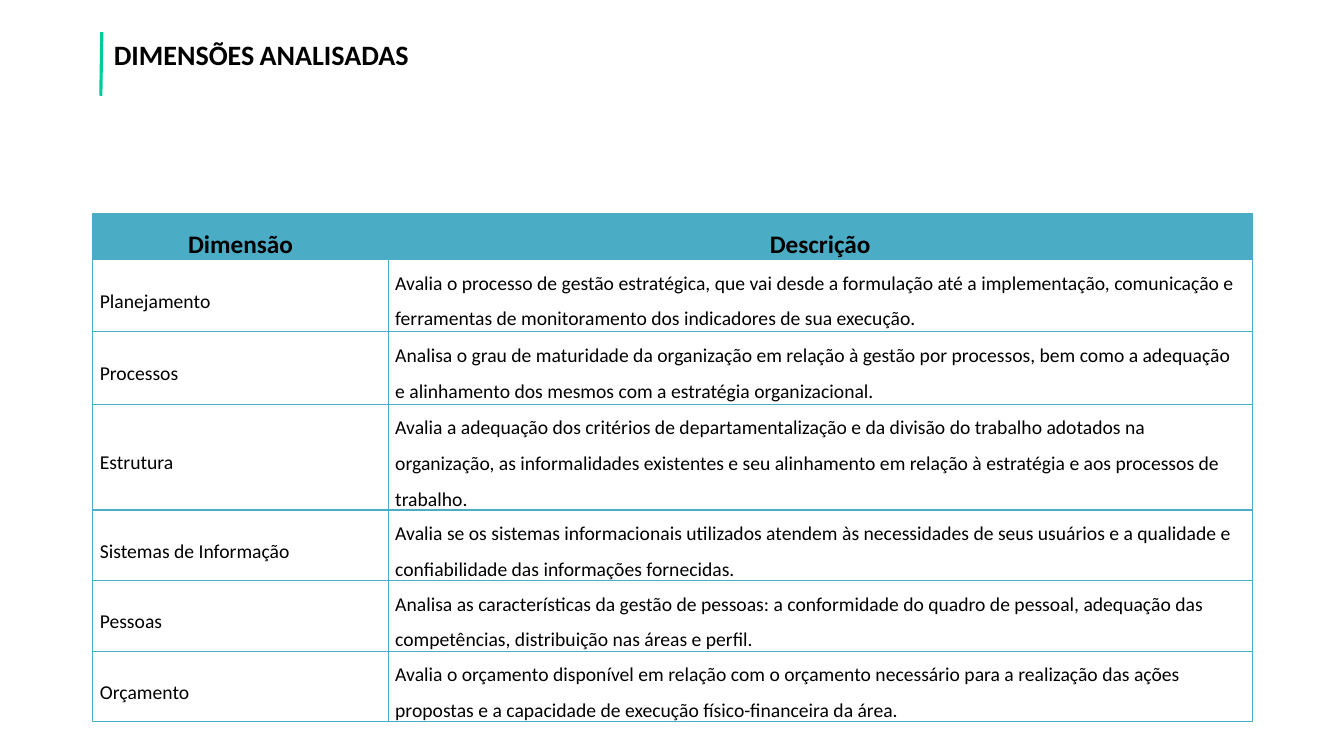
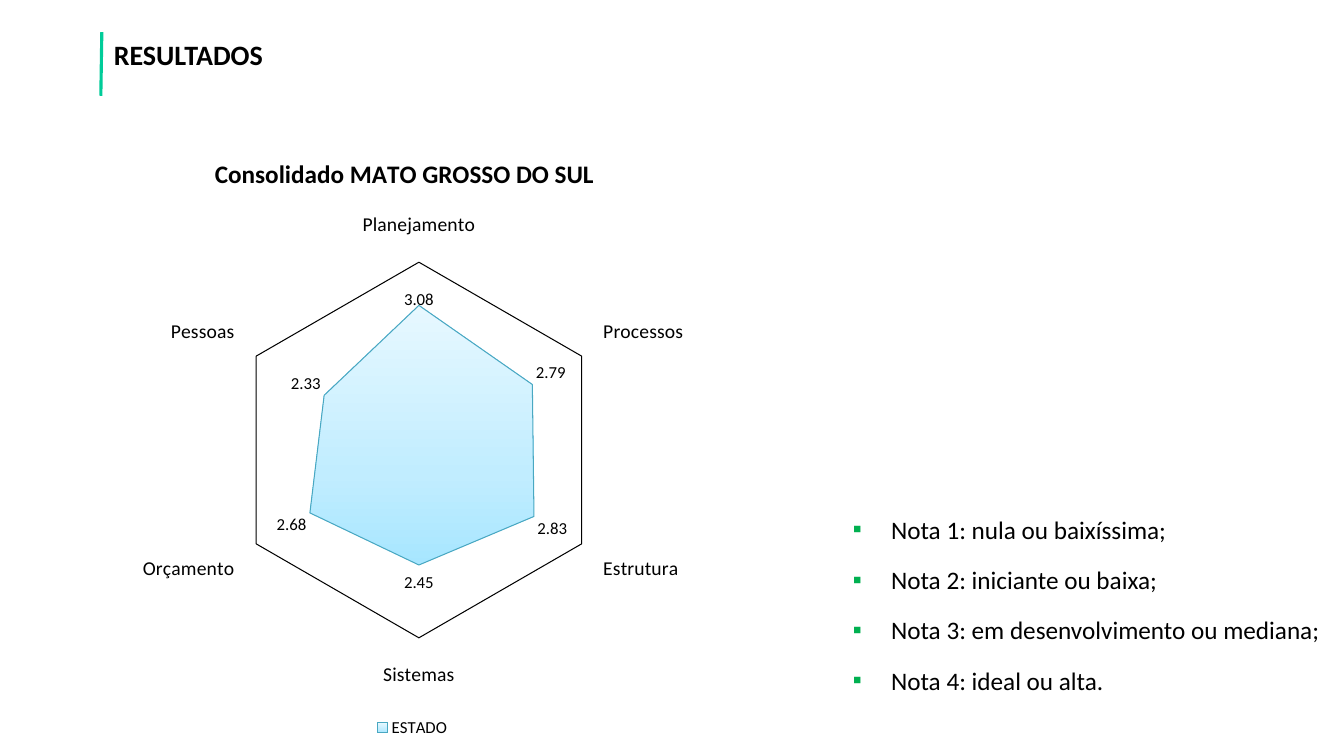
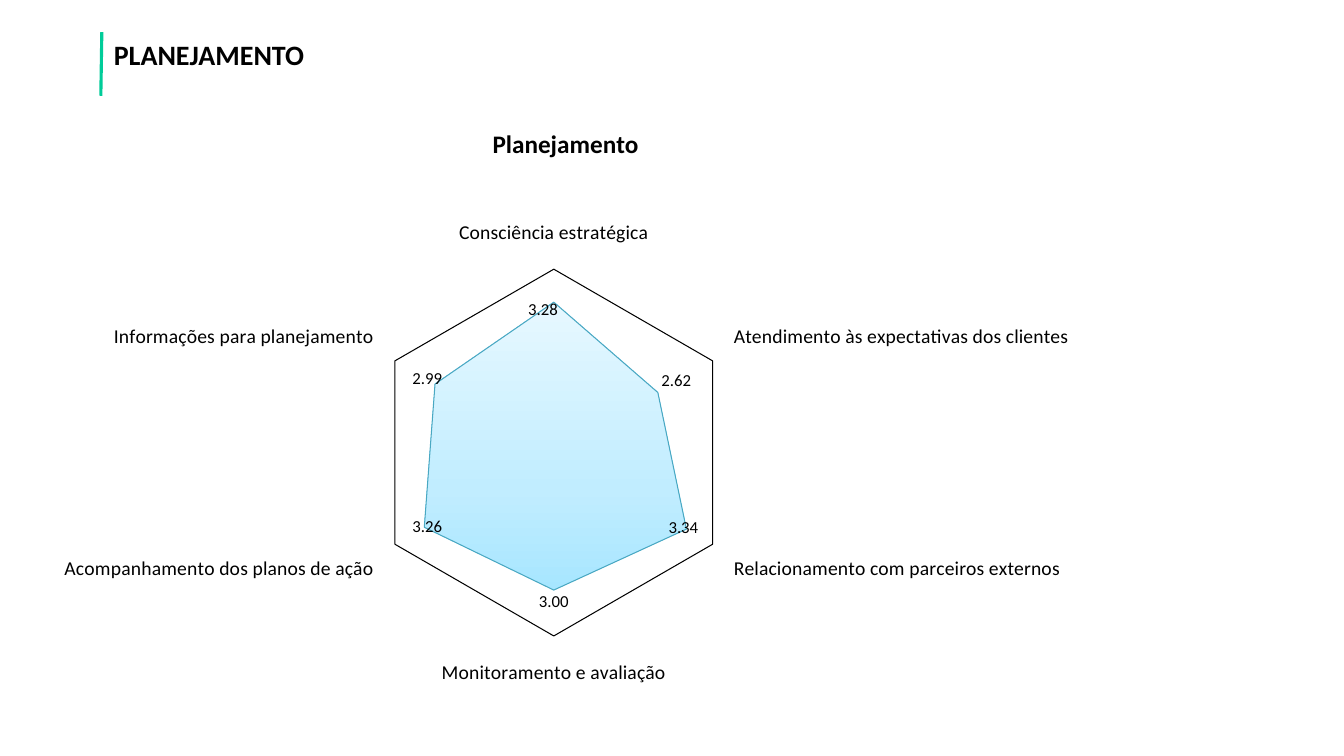
from pptx import Presentation
from pptx.chart.data import CategoryChartData
from pptx.dml.color import RGBColor
from pptx.enum.chart import XL_CHART_TYPE, XL_LEGEND_POSITION, XL_TICK_LABEL_POSITION, XL_TICK_MARK
from pptx.enum.shapes import MSO_CONNECTOR
from pptx.enum.text import MSO_ANCHOR, MSO_AUTO_SIZE, PP_ALIGN
from pptx.oxml import parse_xml
from pptx.oxml.ns import nsdecls
from pptx.util import Inches, Pt

RADAR = XL_CHART_TYPE.RADAR_FILLED
LEGEND_BOTTOM = XL_LEGEND_POSITION.BOTTOM
NO_LABELS = XL_TICK_LABEL_POSITION.NONE
NO_TICKS = XL_TICK_MARK.NONE
STRAIGHT = MSO_CONNECTOR.STRAIGHT
MIDDLE = MSO_ANCHOR.MIDDLE
GROW = MSO_AUTO_SIZE.SHAPE_TO_FIT_TEXT
LEFT, CENTER = PP_ALIGN.LEFT, PP_ALIGN.CENTER

FONT = "Calibri"
BLACK, GREY, AXIS_GREY = "000000", "808080", "D9D9D9"
ACCENT, TEAL, BULLET_GREEN, AREA_EDGE = "00CC99", "4BACC6", "00B050", "49A8C2"
AREA_STOPS = [(0, "A7E6FF"), (35, "C1EDFF"), (100, "E7F8FF")]

DIMENSIONS = [
    ("Dimensão", "Descrição"),
    ("Planejamento", "Avalia o processo de gestão estratégica, que vai desde a formulação até a implementação, "
     "comunicação e ferramentas de monitoramento dos indicadores de sua execução."),
    ("Processos", "Analisa o grau de maturidade da organização em relação à gestão por processos, bem como a "
     "adequação e alinhamento dos mesmos com a estratégia organizacional."),
    ("Estrutura", "Avalia a adequação dos critérios de departamentalização e da divisão do trabalho adotados na "
     "organização, as informalidades existentes e seu alinhamento em relação à estratégia e aos processos de "
     "trabalho."),
    ("Sistemas de Informação", "Avalia se os sistemas informacionais utilizados atendem às necessidades de seus "
     "usuários e a qualidade e confiabilidade das informações fornecidas."),
    ("Pessoas", "Analisa as características da gestão de pessoas: a conformidade do quadro de pessoal, adequação "
     "das competências, distribuição nas áreas e perfil."),
    ("Orçamento", "Avalia o orçamento disponível em relação com o orçamento necessário para a realização das ações "
     "propostas e a capacidade de execução físico-financeira da área."),
]
COLUMN_WIDTHS = [2.93, 8.57]
ROW_HEIGHTS = [0.24, 0.72, 0.72, 0.78, 0.68, 0.68, 0.68]

GRADES = [
    "Nota 1: nula ou baixíssima;",
    "Nota 2: iniciante ou baixa;",
    "Nota 3: em desenvolvimento ou mediana;",
    "Nota 4: ideal ou alta.",
]

# Title and plot places, and label shifts by point, are shares of the chart's size.
STATE_CHART = {
    "title": "Consolidado MATO GROSSO DO SUL",
    "series": "ESTADO",
    "scores": {"Planejamento": 3.08, "Processos": 2.79, "Estrutura": 2.83,
               "Sistemas": 2.45, "Orçamento": 2.68, "Pessoas": 2.33},
    "box": (0, 1.26, 8.18, 6.1),
    "title_at": (0.255, 0.04),
    "plot_at": (0.28, 0.22, 0.456, 0.611),
    "label_shifts": {0: (0, 0.02)},
    "axis_format": '_(* #,##0.00_);_(* \\(#,##0.00\\);_(* "-"?',
    "label_format": "#,##0.00",
    "legend": True,
}
PLANNING_CHART = {
    "title": "Planejamento",
    "series": "Series 1",
    "scores": {"Consciência estratégica": 3.28, "Atendimento às expectativas dos clientes": 2.62,
               "Relacionamento com parceiros externos": 3.34, "Monitoramento e avaliação": 3,
               "Acompanhamento dos planos de ação": 3.26, "Informações para planejamento": 2.99},
    "box": (0.31, 0.95, 10.61, 6.42),
    "title_at": (0.427, 0.04),
    "plot_at": (0.317, 0.268, 0.343, 0.567),
    "label_shifts": {0: (-0.01, 0.04), 2: (-0.02, -0.02), 3: (0, -0.01),
                     4: (0.02, -0.02), 5: (0.01, 0.01)},
    "axis_format": "0.00",
    "label_format": "0.00",
    "legend": False,
}


def color(hex_text):
    return RGBColor.from_string(hex_text)


def style_font(font, size, bold=False, hex_text=BLACK):
    font.name, font.size, font.bold = FONT, Pt(size), bold
    font.color.rgb = color(hex_text)


def style_line(line, hex_text, width):
    line.color.rgb = color(hex_text)
    line.width = Pt(width)


def inches(*lengths):
    return [Inches(length) for length in lengths]


def titled_slide(deck, title):
    """Add a blank slide with the accent rule and the title."""
    page = deck.slides.add_slide(deck.slide_layouts[6])
    rule = page.shapes.add_connector(STRAIGHT, *inches(1.01, 0.32, 1, 0.95))
    style_line(rule.line, ACCENT, 2.25)
    rule._element.spPr.append(parse_xml(f"<a:effectLst {nsdecls('a')}/>"))
    box = page.shapes.add_textbox(*inches(1.03, 0.32, 8.59, 0.44))
    frame = box.text_frame
    frame.word_wrap, frame.auto_size = True, GROW
    frame.text = title
    span = frame.paragraphs[0].runs[0]
    style_font(span.font, 20, True)
    span.font._element.set("cap", "small")
    return page


def add_borders(cell):
    properties = cell._tc.get_or_add_tcPr()
    for position, side in enumerate(("lnL", "lnR", "lnT", "lnB")):
        properties.insert(position, parse_xml(
            f'<a:{side} {nsdecls("a")} w="{Pt(1)}"><a:solidFill><a:srgbClr val="{TEAL}"/>'
            f'</a:solidFill></a:{side}>'))


def add_dimension_table(page):
    shape = page.shapes.add_table(len(DIMENSIONS), len(COLUMN_WIDTHS), *inches(
        0.92, 2.12, sum(COLUMN_WIDTHS), sum(ROW_HEIGHTS)))
    table = shape.table
    table.first_row = table.horz_banding = False
    for column, width in zip(table.columns, COLUMN_WIDTHS):
        column.width = Inches(width)
    for index, (row, texts) in enumerate(zip(table.rows, DIMENSIONS)):
        row.height = Inches(ROW_HEIGHTS[index])
        header = index == 0
        for cell, text in zip(row.cells, texts):
            cell.text = text
            cell.vertical_anchor = MIDDLE
            cell.margin_left = cell.margin_right = Inches(0.07)
            cell.margin_top = cell.margin_bottom = 0
            if header:
                cell.fill.solid()
                cell.fill.fore_color.rgb = color(TEAL)
            else:
                cell.fill.background()
            add_borders(cell)
            para = cell.text_frame.paragraphs[0]
            para.alignment = CENTER if header else LEFT
            para.line_spacing = 1.5
            para.space_before, para.space_after = Pt(6), Pt(0.6)
            style_font(para.runs[0].font, 18 if header else 14, header)


def add_grades(page):
    frame = page.shapes.add_textbox(*inches(8.36, 4.9, 5.36, 1.44)).text_frame
    frame.word_wrap = True
    frame.text = "\n".join(GRADES)
    for index, para in enumerate(frame.paragraphs):
        para.line_spacing = 1.5
        para.space_before = Pt(3.6 if index else 0)
        properties = para._p.get_or_add_pPr()
        properties.set("marL", str(Inches(0.38)))
        properties.set("indent", str(-Inches(0.38)))
        for bullet in (f'<a:buClr {nsdecls("a")}><a:srgbClr val="{BULLET_GREEN}"/></a:buClr>',
                       f'<a:buFont {nsdecls("a")} typeface="{FONT}"/>',
                       f'<a:buChar {nsdecls("a")} char="▪"/>'):
            properties.append(parse_xml(bullet))
        style_font(para.runs[0].font, 18)


def place(element, position, shares, inner=False):
    """Give a chart part a manual layout, as the child at the given position."""
    for old in element.xpath("c:layout"):
        element.remove(old)
    target = '<c:layoutTarget val="inner"/>' if inner else ""
    modes = '<c:xMode val="edge"/><c:yMode val="edge"/>' if element.tag.endswith(("title", "plotArea")) else ""
    values = "".join(f'<c:{name} val="{share}"/>' for name, share in zip("xywh", shares))
    element.insert(position, parse_xml(
        f'<c:layout {nsdecls("c")}><c:manualLayout>{target}{modes}{values}</c:manualLayout></c:layout>'))


def style_axes(chart, number_format):
    categories, values = chart.category_axis, chart.value_axis
    categories.has_major_gridlines = False
    categories.major_tick_mark = values.major_tick_mark = NO_TICKS
    style_font(categories.tick_labels.font, 14)
    style_line(categories.format.line, AXIS_GREY, 0.75)
    values.minimum_scale, values.maximum_scale, values.major_unit = 0, 4, 4
    style_font(values.tick_labels.font, 12, hex_text=GREY)
    values.tick_labels.number_format = number_format
    values.tick_labels.number_format_is_linked = False
    values.tick_label_position = NO_LABELS
    values.format.line.fill.background()
    values.has_major_gridlines = True
    style_line(values.major_gridlines.format.line, BLACK, 0.75)


def style_labels(series, number_format, shifts):
    labels = series.data_labels
    labels.show_value = True
    labels.number_format, labels.number_format_is_linked = number_format, False
    style_font(labels.font, 12)
    for index, shift in shifts.items():
        style_font(series.points[index].data_label.font, 12)
        label = series._element.xpath(f"c:dLbls/c:dLbl[c:idx/@val={index}]")[0]
        place(label, 1, shift)
        label.insert(2, parse_xml(
            f'<c:numFmt {nsdecls("c")} formatCode="{number_format}" sourceLinked="0"/>'))


def add_radar(page, content):
    data = CategoryChartData()
    data.categories = list(content["scores"])
    data.add_series(content["series"], list(content["scores"].values()))
    chart = page.shapes.add_chart(RADAR, *inches(*content["box"]), data).chart
    style_font(chart.font, 10)

    chart.has_title = True
    frame = chart.chart_title.text_frame
    frame.text = content["title"]
    style_font(frame.paragraphs[0].runs[0].font, 18, True)
    place(chart.chart_title._element, 1, content["title_at"])
    place(chart._chartSpace.chart.plotArea, 0, content["plot_at"], inner=True)

    chart.has_legend = content["legend"]
    if chart.has_legend:
        chart.legend.position = LEGEND_BOTTOM
        chart.legend.include_in_layout = False
        style_font(chart.legend.font, 12)

    style_axes(chart, content["axis_format"])
    plot = chart.plots[0]
    plot.vary_by_categories = False
    series = plot.series[0]
    style_line(series.format.line, AREA_EDGE, 0.75)
    stops = "".join(f'<a:gs pos="{share * 1000}"><a:srgbClr val="{tint}"/></a:gs>'
                    for share, tint in AREA_STOPS)
    series._element.get_or_add_spPr().insert(0, parse_xml(
        f'<a:gradFill {nsdecls("a")} rotWithShape="1"><a:gsLst>{stops}</a:gsLst>'
        '<a:lin ang="16200000" scaled="0"/></a:gradFill>'))
    style_labels(series, content["label_format"], content["label_shifts"])


def main():
    deck = Presentation()
    deck.slide_width, deck.slide_height = inches(13.33, 7.5)
    add_dimension_table(titled_slide(deck, "DIMENSÕES ANALISADAS"))
    results = titled_slide(deck, "RESULTADOS")
    add_grades(results)
    add_radar(results, STATE_CHART)
    add_radar(titled_slide(deck, "PLANEJAMENTO"), PLANNING_CHART)
    deck.save("out.pptx")


if __name__ == "__main__":
    main()
